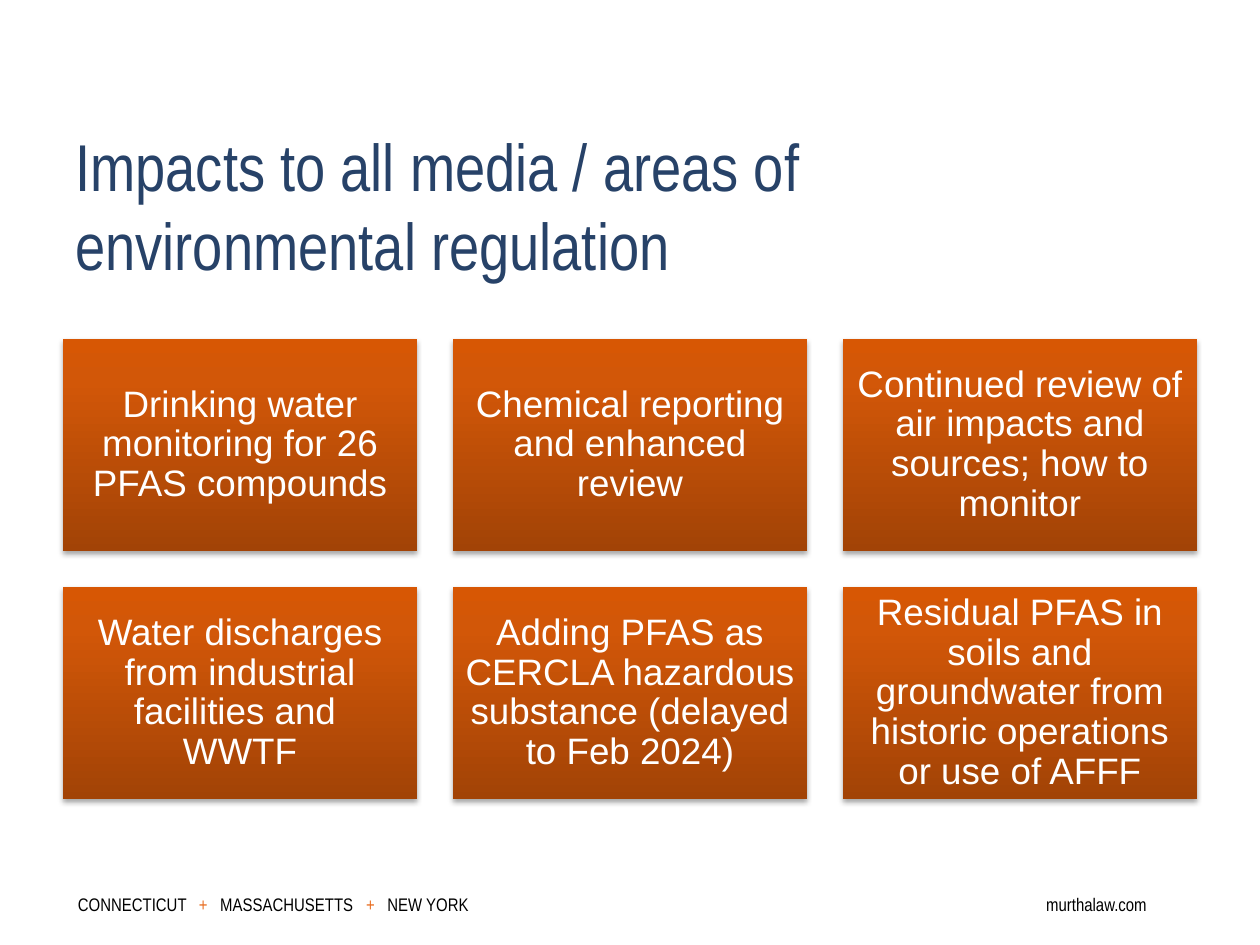
import copy
from dataclasses import dataclass

import pptx
import pptx.dml.color
import pptx.enum.shapes
import pptx.enum.text
import pptx.oxml
import pptx.oxml.ns
import pptx.util
from lxml import etree

Cm, Pt = pptx.util.Cm, pptx.util.Pt
RGBColor = pptx.dml.color.RGBColor
qn = pptx.oxml.ns.qn
ANCHOR = pptx.enum.text.MSO_ANCHOR

NAVY = RGBColor(0x27, 0x42, 0x68)
WHITE = RGBColor(0xFF, 0xFF, 0xFF)
BLACK = RGBColor(0x00, 0x00, 0x00)
ORANGE = RGBColor(0xE8, 0x6C, 0x1F)
CARD_STOPS = [
    (0, RGBColor(0xA2, 0x43, 0x06)),
    (0.8, RGBColor(0xD2, 0x57, 0x08)),
    (1, RGBColor(0xD7, 0x57, 0x04)),
]

# Card grid, in cm
COLUMNS = 3
GRID_LEFT, GRID_TOP = 1.27, 6.83
CARD_W, CARD_H = 7.14, 4.28
GAP = 0.72
INSET = Cm(0.23)


@dataclass
class Card:
    text: str
    col: int
    row: int


@dataclass
class FooterPart:
    text: str
    color: RGBColor
    tab: float  # cm from the start of the text, 0 for the first part


CARD_TEXTS = [
    "Drinking water monitoring for 26 PFAS compounds",
    "Chemical reporting and enhanced review",
    "Continued review of air impacts and sources; how to monitor",
    "Water discharges from industrial facilities and \vWWTF",
    "Adding PFAS as CERCLA hazardous substance (delayed to Feb 2024)",
    "Residual PFAS in soils and groundwater from historic operations or use of AFFF",
]
CARDS = [Card(text, i % COLUMNS, i // COLUMNS) for i, text in enumerate(CARD_TEXTS)]

FOOTER = [
    FooterPart("CONNECTICUT", BLACK, 0),
    FooterPart("+", ORANGE, 2.44),
    FooterPart("MASSACHUSETTS", BLACK, 2.87),
    FooterPart("+", ORANGE, 5.81),
    FooterPart("NEW YORK", BLACK, 6.24),
    FooterPart("murthalaw.com", BLACK, 19.52),
]


def format_run(r, font: str, size: float, color: RGBColor) -> None:
    r.font.name = font
    r.font.size = Pt(size)
    r.font.color.rgb = color


def add_title(s, text: str) -> None:
    sp = s.shapes.add_textbox(Cm(1.27), Cm(2.54), Cm(18.42), Cm(3.18))
    tf = sp.text_frame
    tf.word_wrap = True
    tf.vertical_anchor = ANCHOR.MIDDLE
    tf.text = text
    format_run(tf.paragraphs[0].runs[0], "Arial Narrow", 37.8, NAVY)


def style_card(sp) -> None:
    # Vertical gradient, dark at the bottom
    sp.fill.gradient()
    sp.fill.gradient_angle = 90
    stops = sp._element.spPr.find(".//" + qn("a:gsLst"))
    stops.append(copy.deepcopy(stops[-1]))
    for stop, (position, color) in zip(sp.fill.gradient_stops, CARD_STOPS):
        stop.position = position
        stop.color.rgb = color
    sp.line.fill.background()

    # Soft shadow below
    sp.shadow.inherit = False
    effects = sp._element.spPr.find(qn("a:effectLst"))
    shadow = etree.SubElement(
        effects, qn("a:outerShdw"), blurRad=str(Pt(3.1)), dist=str(Pt(1.8)),
        dir="5400000", rotWithShape="0")
    color = etree.SubElement(shadow, qn("a:srgbClr"), val=str(BLACK))
    etree.SubElement(color, qn("a:alpha"), val="35000")


def add_card(s, card: Card) -> None:
    sp = s.shapes.add_shape(
        pptx.enum.shapes.MSO_SHAPE.RECTANGLE,
        Cm(GRID_LEFT + card.col * (CARD_W + GAP)),
        Cm(GRID_TOP + card.row * (CARD_H + GAP)),
        Cm(CARD_W), Cm(CARD_H))
    style_card(sp)
    tf = sp.text_frame
    tf.word_wrap = True
    tf.vertical_anchor = ANCHOR.MIDDLE
    tf.margin_left = tf.margin_right = tf.margin_top = tf.margin_bottom = INSET
    p = tf.paragraphs[0]
    p.text = card.text
    p.alignment = pptx.enum.text.PP_ALIGN.CENTER
    p.line_spacing = 0.9
    for r in p.runs:
        format_run(r, "Arial", 21, WHITE)


def add_footer(s, parts: list[FooterPart]) -> None:
    sp = s.shapes.add_textbox(Cm(1.32), Cm(17.81), Cm(24.08), Cm(1.02))
    tf = sp.text_frame
    tf.word_wrap = True
    p = tf.paragraphs[0]
    tabs = etree.SubElement(p._p.get_or_add_pPr(), qn("a:tabLst"))
    for part in parts:
        if part.tab:
            etree.SubElement(tabs, qn("a:tab"), pos=str(Cm(part.tab)), algn="l")
        r = p.add_run()
        r.text = "\t" + part.text if part.tab else part.text
        format_run(r, "Arial Narrow", 18, part.color)
        r._r.get_or_add_rPr().set("baseline", "30000")


def main() -> None:
    prs = pptx.Presentation()
    prs.slide_width, prs.slide_height = Cm(25.4), Cm(19.05)
    s = prs.slides.add_slide(prs.slide_layouts[6])
    add_footer(s, FOOTER)
    add_title(s, "Impacts to all media / areas of environmental regulation")
    for card in CARDS:
        add_card(s, card)
    prs.save("out.pptx")


if __name__ == "__main__":
    main()
